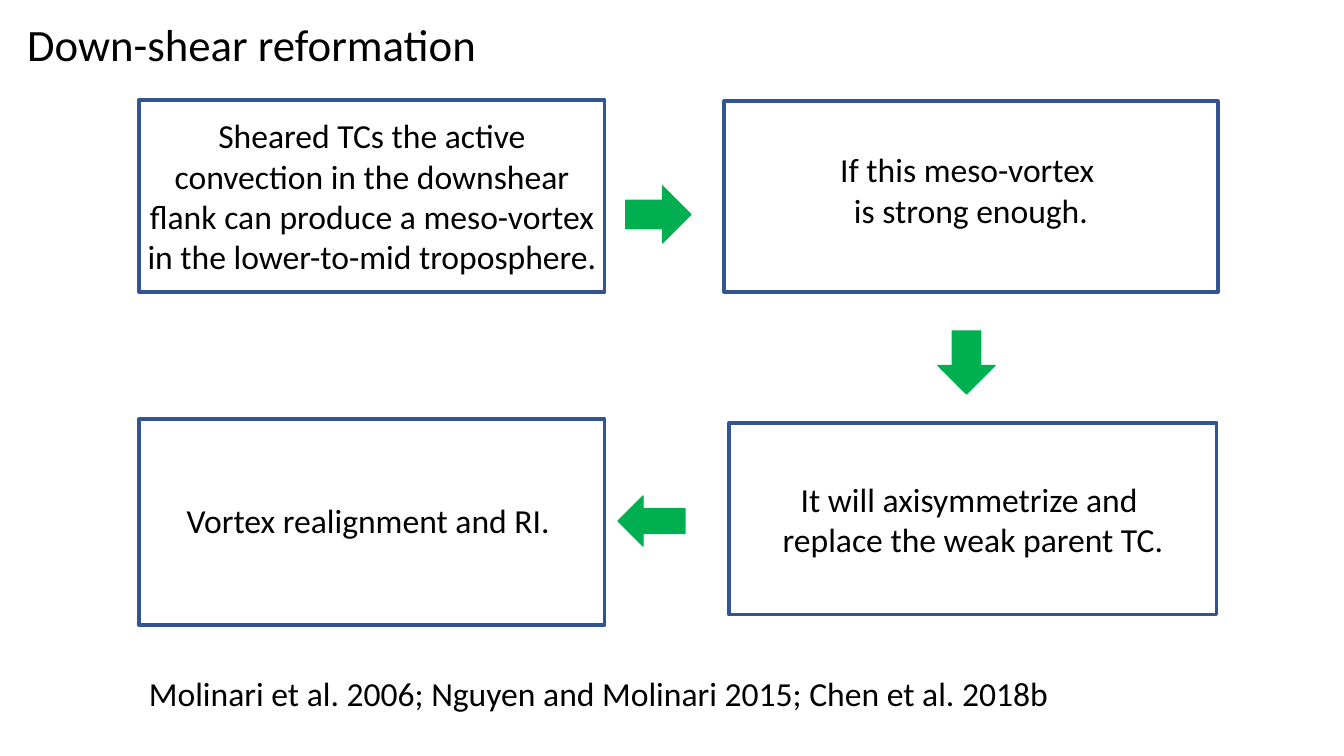
"""Build the down-shear reformation flow slide."""
from pptx import Presentation
from pptx.dml.color import RGBColor
from pptx.enum import shapes, text
from pptx.util import Pt

PX = 9071
COLORS = {"text": "000000", "border": "325491", "arrow": "00B050"}
FONT = "Calibri"

TITLE = ("Down-shear reformation", (17, 12, 1219, 105))
CITATION = ("Molinari et al. 2006; Nguyen and Molinari 2015; Chen et al. 2018b",
            (139, 668, 937, 50))
STAGES = [
    (["Sheared TCs the active convection in the downshear flank can produce "
      "a meso-vortex in the lower-to-mid troposphere."], (139, 100, 466, 192), 0),
    (["If this meso-vortex ", "is strong enough."], (724, 101, 494, 191), 7),
    (["It will axisymmetrize and ", "replace the weak parent TC."],
     (729, 423, 488, 192), 0),
    (["Vortex realignment and RI. "], (139, 419, 466, 206), 2),
]
ARROWS = [
    ((626, 186, 65, 57), 0),
    ((935, 334, 63, 57), 90),
    ((618, 496, 67, 50), 180),
]


def color(name):
    return RGBColor.from_string(COLORS[name])


def emu(frame):
    return [value * PX for value in frame]


def write(frame, lines, size, align):
    frame.text = "\n".join(lines)
    for paragraph in frame.paragraphs:
        paragraph.alignment = align
        paragraph.font.name = FONT
        paragraph.font.size = Pt(size)
        paragraph.font.color.rgb = color("text")


def outline(shape, name, width):
    shape.shadow.inherit = False
    shape.line.color.rgb = color(name)
    shape.line.width = Pt(width)


def add_stage(slide, lines, frame, lift):
    stage = slide.shapes.add_shape(shapes.MSO_SHAPE.RECTANGLE, *emu(frame))
    outline(stage, "border", 2.25)
    stage.fill.background()
    body = stage.text_frame
    body.word_wrap = True
    body.vertical_anchor = text.MSO_ANCHOR.MIDDLE
    body.margin_left = body.margin_right = body.margin_top = 5 * PX
    body.margin_bottom = (5 + 2 * lift) * PX
    write(body, lines, 24, text.PP_ALIGN.CENTER)


def add_arrow(slide, frame, rotation):
    arrow = slide.shapes.add_shape(shapes.MSO_SHAPE.RIGHT_ARROW, *emu(frame))
    outline(arrow, "arrow", 1)
    arrow.fill.solid()
    arrow.fill.fore_color.rgb = color("arrow")
    arrow.rotation = rotation


def main():
    deck = Presentation()
    deck.slide_width, deck.slide_height = 1344 * PX, 756 * PX
    slide = deck.slides.add_slide(deck.slide_layouts[5])

    heading, frame = TITLE
    title = slide.shapes.title
    title.left, title.top, title.width, title.height = emu(frame)
    title.text_frame.vertical_anchor = text.MSO_ANCHOR.TOP
    write(title.text_frame, [heading], 32, text.PP_ALIGN.LEFT)

    for stage in STAGES:
        add_stage(slide, *stage)
    for arrow in ARROWS:
        add_arrow(slide, *arrow)

    sources, frame = CITATION
    citation = slide.shapes.add_textbox(*emu(frame))
    write(citation.text_frame, [sources], 24, text.PP_ALIGN.LEFT)
    deck.save("out.pptx")


if __name__ == "__main__":
    main()
